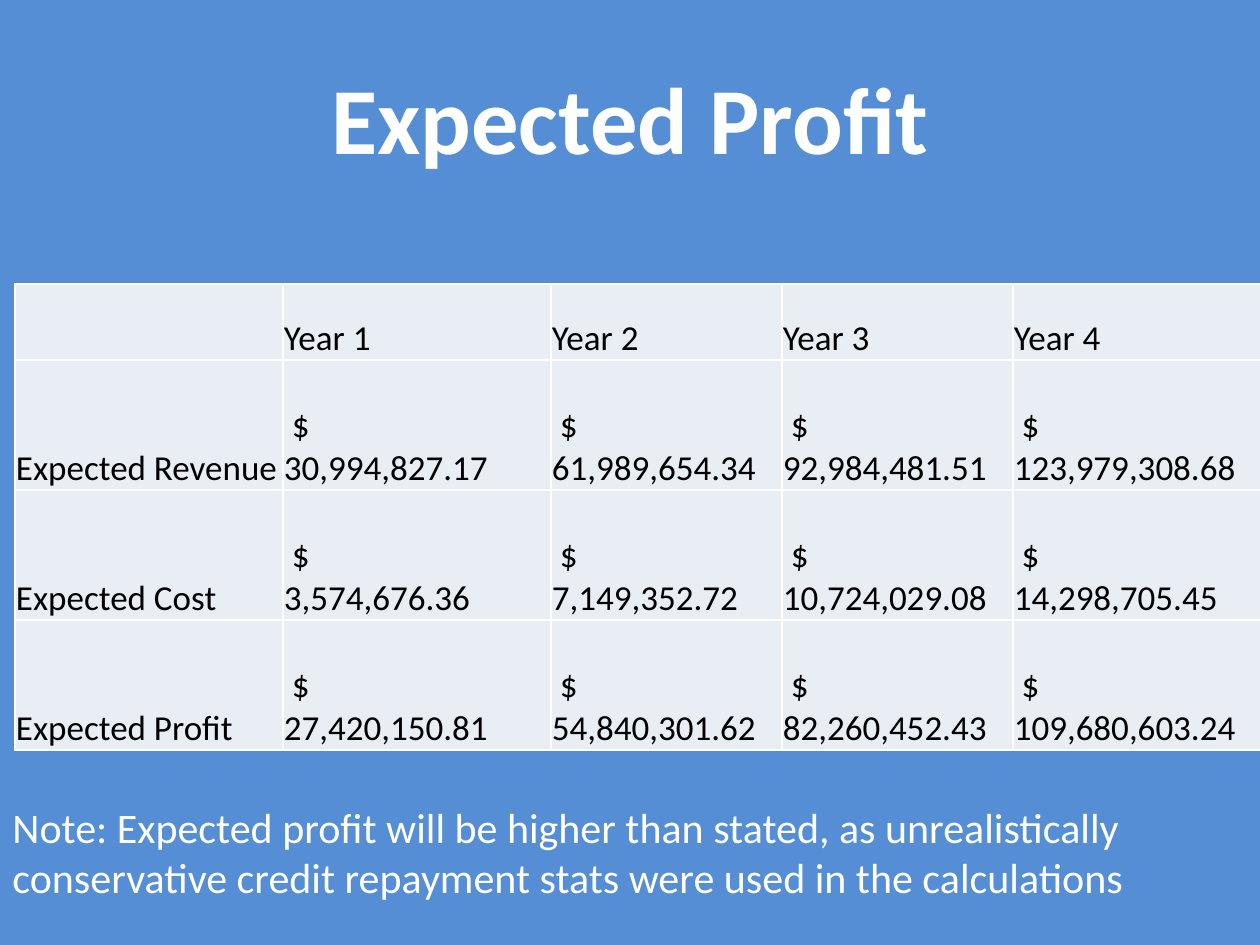
from lxml.etree import SubElement
from pptx import Presentation
from pptx.dml.color import RGBColor
from pptx.enum.text import MSO_ANCHOR, MSO_AUTO_SIZE, PP_ALIGN
from pptx.oxml.ns import qn
from pptx.util import Pt

TITLE = "Expected Profit"
YEARS = ["Year 1", "Year 2", "Year 3", "Year 4"]
AMOUNTS = {
    "Expected Revenue": ["30,994,827.17", "61,989,654.34", "92,984,481.51", "123,979,308.68"],
    "Expected Cost": ["3,574,676.36", "7,149,352.72", "10,724,029.08", "14,298,705.45"],
    "Expected Profit": ["27,420,150.81", "54,840,301.62", "82,260,452.43", "109,680,603.24"],
}
NOTE = [
    "Note: Expected profit will be higher than stated, as unrealistically",
    "conservative credit repayment stats were used in the calculations",
]

COLUMN_WIDTHS = [268, 268, 231, 231, 248]
ROW_HEIGHTS = [76, 130, 130, 130]
BLUE, PALE, WHITE, BLACK = "558ED5", "E9EDF4", "FFFFFF", "000000"


def px(length):
    return round(length * 914400 / 126)


def color(hex_value):
    return RGBColor.from_string(hex_value)


def write(frame, lines, size, ink=WHITE, bold=False, align=PP_ALIGN.LEFT, anchor=MSO_ANCHOR.TOP):
    frame.text = "\n".join(lines)
    frame.vertical_anchor = anchor
    for paragraph in frame.paragraphs:
        paragraph.alignment = align
        font = paragraph.font
        for target in [font] + [run.font for run in paragraph.runs]:
            target.name, target.size, target.bold = "Calibri", Pt(size), bold
            target.color.rgb = color(ink)


def add_borders(cell, hex_value, width):
    properties = cell._tc.get_or_add_tcPr()
    for side in ("lnL", "lnR", "lnT", "lnB"):
        line = SubElement(properties, qn(f"a:{side}"), w=str(Pt(width)))
        fill = SubElement(line, qn("a:solidFill"))
        SubElement(fill, qn("a:srgbClr"), val=hex_value)


def add_profit_table(slide):
    rows = [["", *YEARS]]
    for label, amounts in AMOUNTS.items():
        rows.append([label] + [f" $\v{amount}" for amount in amounts])

    table = slide.shapes.add_table(
        len(rows), len(COLUMN_WIDTHS), px(15), px(284),
        px(sum(COLUMN_WIDTHS)), px(sum(ROW_HEIGHTS))).table
    for column, width in zip(table.columns, COLUMN_WIDTHS):
        column.width = px(width)
    for row, height, texts in zip(table.rows, ROW_HEIGHTS, rows):
        row.height = px(height)
        for cell, text in zip(row.cells, texts):
            add_borders(cell, WHITE, 1)
            cell.fill.solid()
            cell.fill.fore_color.rgb = color(PALE)
            cell.margin_left = cell.margin_right = cell.margin_top = px(1)
            cell.margin_bottom = 0
            write(cell.text_frame, [text], 20, ink=BLACK)
            cell.vertical_anchor = MSO_ANCHOR.BOTTOM


def main():
    deck = Presentation()
    deck.slide_width, deck.slide_height = px(1260), px(945)
    slide = deck.slides.add_slide(deck.slide_layouts[5])
    slide.background.fill.solid()
    slide.background.fill.fore_color.rgb = color(BLUE)

    title = slide.shapes.title
    title.left, title.top, title.width, title.height = map(px, (63, 38, 1134, 157))
    write(title.text_frame, [TITLE], 54, bold=True,
          align=PP_ALIGN.CENTER, anchor=MSO_ANCHOR.MIDDLE)

    add_profit_table(slide)

    note = slide.shapes.add_textbox(*map(px, (0, 795, 1153, 115))).text_frame
    note.word_wrap = False
    note.auto_size = MSO_AUTO_SIZE.SHAPE_TO_FIT_TEXT
    write(note, NOTE, 24)

    deck.save("out.pptx")


if __name__ == "__main__":
    main()
